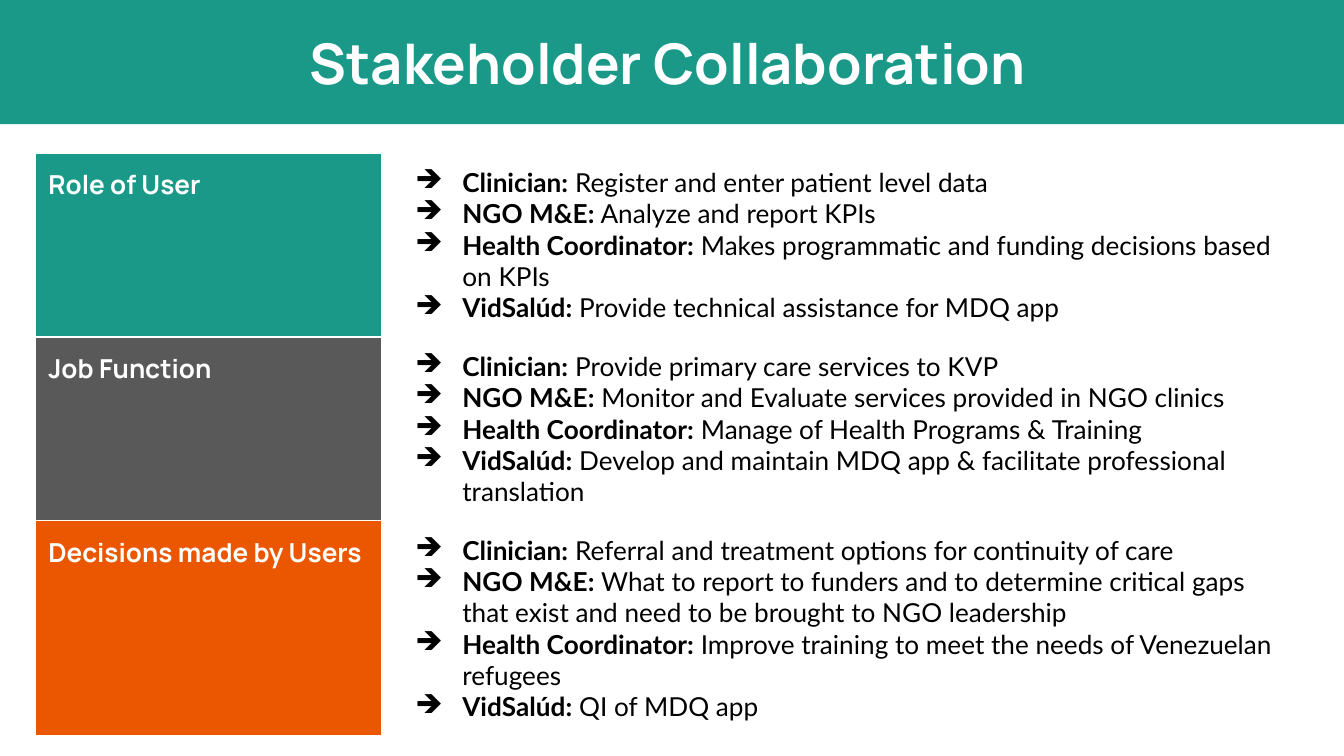
from lxml.etree import SubElement
from pptx import Presentation
from pptx.dml.color import RGBColor as RGB
from pptx.enum.shapes import MSO_SHAPE as Shape
from pptx.enum.text import MSO_ANCHOR as Anchor, MSO_AUTO_SIZE as AutoSize, PP_ALIGN as Align
from pptx.oxml.ns import qn
from pptx.util import Pt

# Content: topic, label colour, row height, (stakeholder, description)
TITLE = "Stakeholder Collaboration"
TOPICS = [
    ("Role of User", "teal", 95, [
        ("Clinician:", "Register and enter patient level data"),
        ("NGO M&E:", "Analyze and report KPIs"),
        ("Health Coordinator:", "Makes programmatic and funding decisions based on KPIs"),
        ("VidSalúd:", "Provide technical assistance for MDQ app"),
    ]),
    ("Job Function", "gray", 95, [
        ("Clinician:", "Provide primary care services to KVP"),
        ("NGO M&E:", "Monitor and Evaluate services provided in NGO clinics"),
        ("Health Coordinator:", "Manage of Health Programs & Training"),
        ("VidSalúd:", "Develop and maintain MDQ app & facilitate professional translation"),
    ]),
    ("Decisions made by Users", "orange", 111.6, [
        ("Clinician:", "Referral and treatment options for continuity of care"),
        ("NGO M&E:", "What to report to funders and to determine critical gaps that "
                     "exist and need to be brought to NGO leadership"),
        ("Health Coordinator:", "Improve training to meet the needs of Venezuelan refugees"),
        ("VidSalúd:", "QI of MDQ app"),
    ]),
]

THEME = {
    "teal": "1A9988", "gray": "595959", "orange": "EB5600",
    "white": "FFFFFF", "black": "000000",
    "heading": "Manrope", "body": "Lato",
    "title_size": 30, "text_size": 14,
}
SLIDE_W, SLIDE_H = 720, 405
BAND_H = 66.5
TABLE_X, TABLE_Y = 18.7, 82.1
COLUMN_WIDTHS = (185.8, 496)
INSET = 7.2
BULLET_INDENT, BULLET_HANG = 36, 25.2


def color(name):
    return RGB.from_string(THEME[name])


def style(font, face, size, color_name, bold):
    font.name, font.size, font.bold = THEME[face], Pt(THEME[size]), bold
    font.color.rgb = color(color_name)


def set_insets(box):
    box.margin_left = box.margin_right = box.margin_top = box.margin_bottom = Pt(INSET)


def add_borders(cell):
    properties = cell._tc.get_or_add_tcPr()
    for side in ("a:lnL", "a:lnR", "a:lnT", "a:lnB"):
        line = SubElement(properties, qn(side), w=str(Pt(0.75)))
        fill = SubElement(line, qn("a:solidFill"))
        SubElement(fill, qn("a:srgbClr"), val=THEME["white"])


def add_bullet(paragraph):
    properties = paragraph._p.get_or_add_pPr()
    properties.set("marL", str(Pt(BULLET_INDENT)))
    properties.set("indent", str(-Pt(BULLET_HANG)))
    bullet_color = SubElement(properties, qn("a:buClr"))
    SubElement(bullet_color, qn("a:srgbClr"), val=THEME["black"])
    SubElement(properties, qn("a:buChar"), char="➔")


def fill_label(cell, topic, color_name):
    cell.fill.solid()
    cell.fill.fore_color.rgb = color(color_name)
    cell.text_frame.text = topic
    style(cell.text_frame.paragraphs[0].runs[0].font, "heading", "text_size", "white", True)


def fill_duties(cell, duties):
    cell.fill.background()
    frame = cell.text_frame
    for number, (stakeholder, description) in enumerate(duties):
        paragraph = frame.add_paragraph() if number else frame.paragraphs[0]
        add_bullet(paragraph)
        for words, bold in ((stakeholder, True), (" " + description, False)):
            run = paragraph.add_run()
            run.text = words
            style(run.font, "body", "text_size", "black", bold)


presentation = Presentation()
presentation.slide_width, presentation.slide_height = Pt(SLIDE_W), Pt(SLIDE_H)
slide = presentation.slides.add_slide(presentation.slide_layouts[5])

# Title
title = slide.shapes.title
title.left, title.top, title.width, title.height = Pt(0), Pt(0), Pt(715.7), Pt(BAND_H)
frame = title.text_frame
frame.text = TITLE
frame.word_wrap = True
frame.auto_size = AutoSize.NONE
frame.vertical_anchor = Anchor.MIDDLE
set_insets(frame)
frame.paragraphs[0].alignment = Align.CENTER
style(frame.paragraphs[0].runs[0].font, "heading", "title_size", "white", True)

# Band behind the title
band = slide.shapes.add_shape(Shape.RECTANGLE, Pt(-7.2), Pt(0), Pt(730), Pt(BAND_H))
band.shadow.inherit = False
band.fill.solid()
band.fill.fore_color.rgb = color("teal")
band.line.fill.background()
title.element.addprevious(band.element)

# Stakeholder table
table = slide.shapes.add_table(
    len(TOPICS), len(COLUMN_WIDTHS), Pt(TABLE_X), Pt(TABLE_Y),
    Pt(sum(COLUMN_WIDTHS)), Pt(sum(height for _, _, height, _ in TOPICS))).table
table.first_row = table.horz_banding = False
for column, width in zip(table.columns, COLUMN_WIDTHS):
    column.width = Pt(width)
for row, (topic, color_name, height, duties) in zip(table.rows, TOPICS):
    row.height = Pt(height)
    for cell in row.cells:
        set_insets(cell)
        add_borders(cell)
    label_cell, duties_cell = row.cells
    fill_label(label_cell, topic, color_name)
    fill_duties(duties_cell, duties)

presentation.save("out.pptx")
